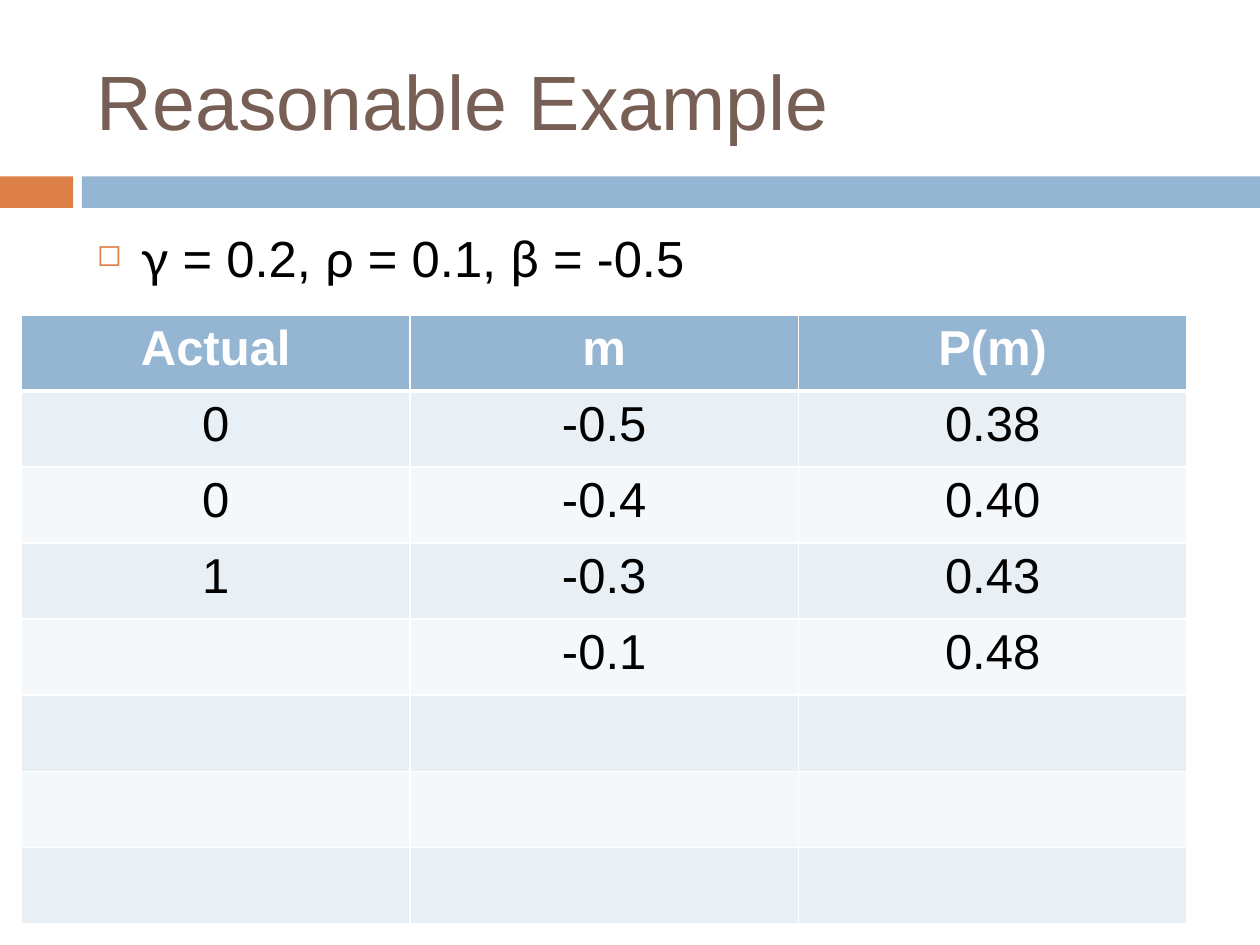
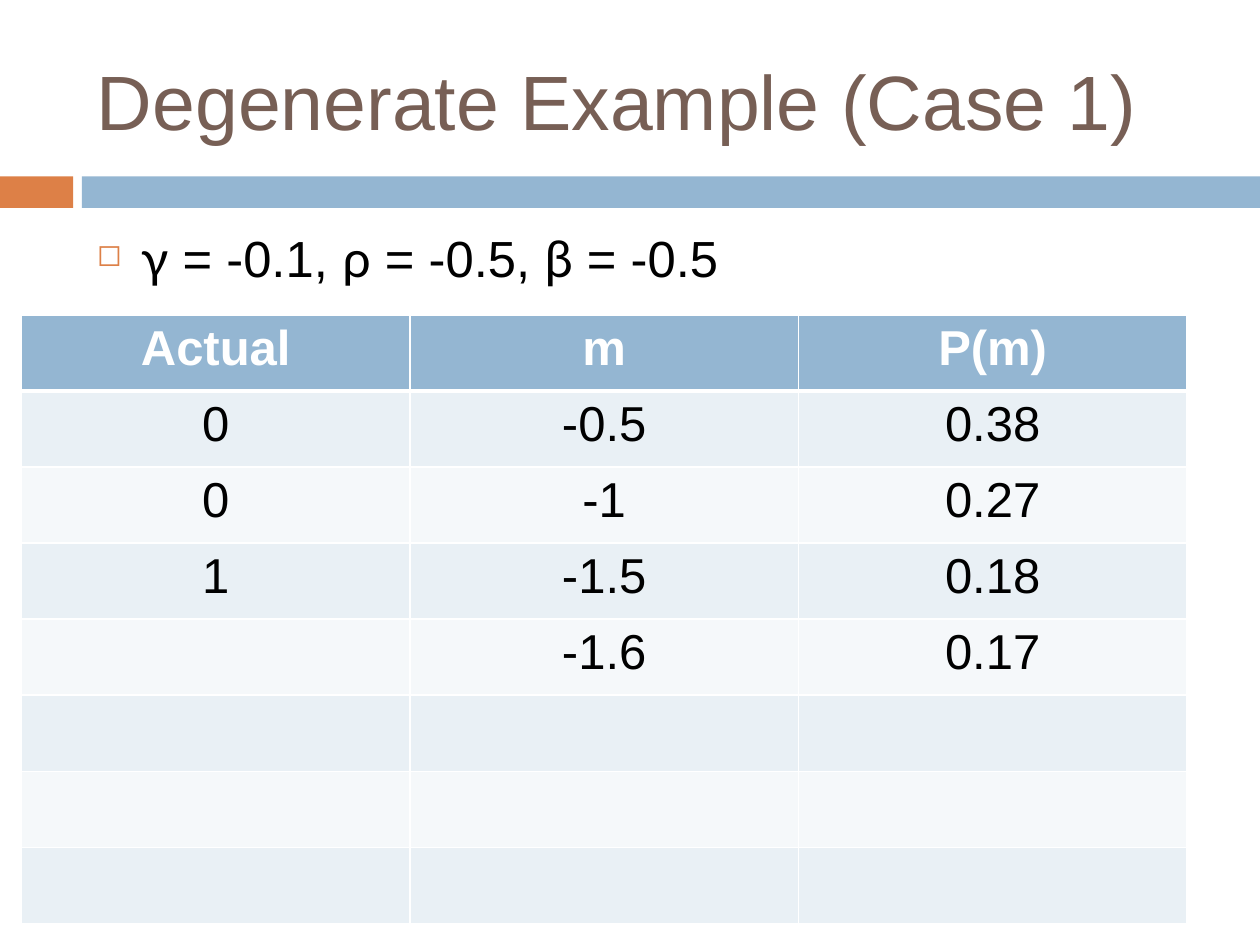
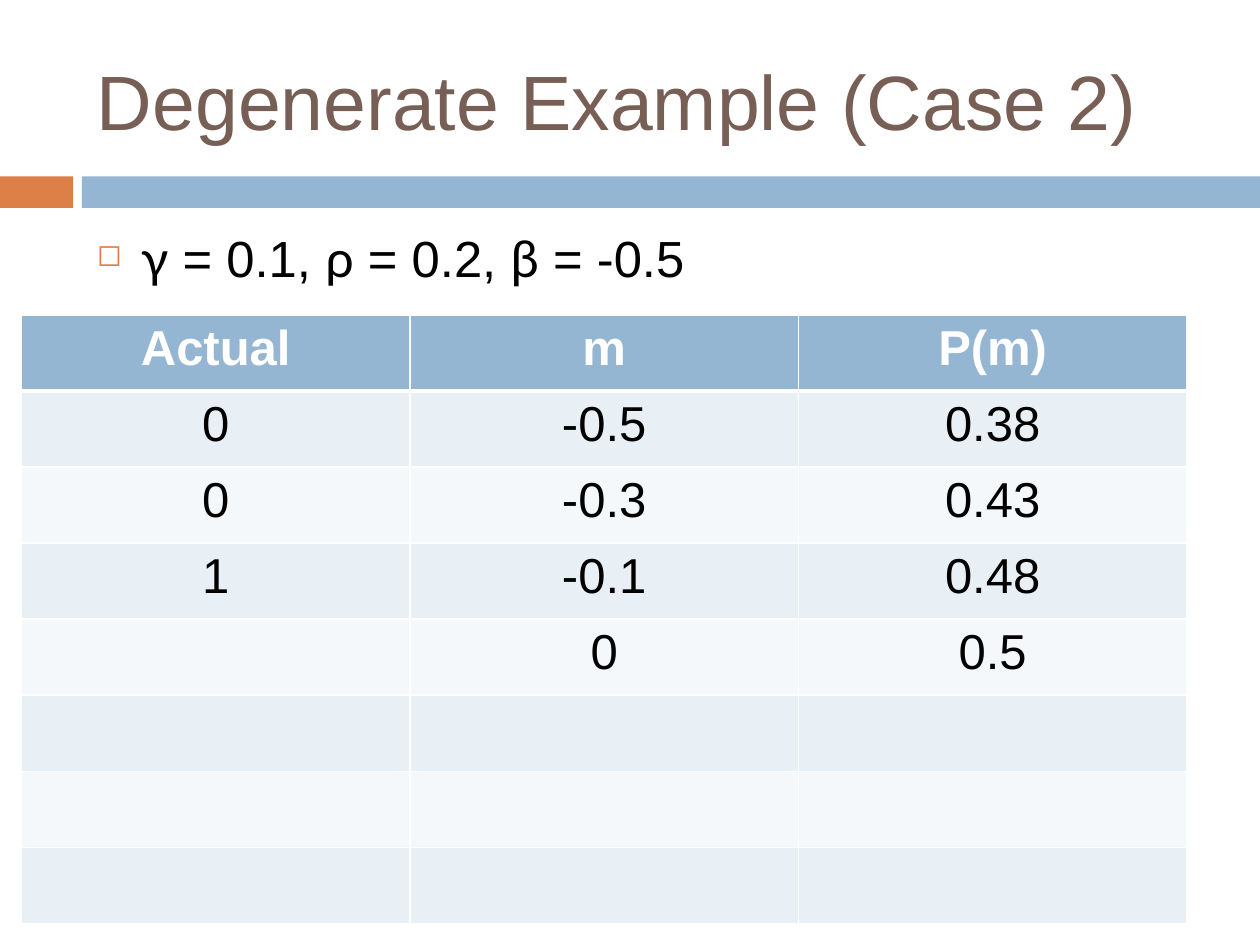
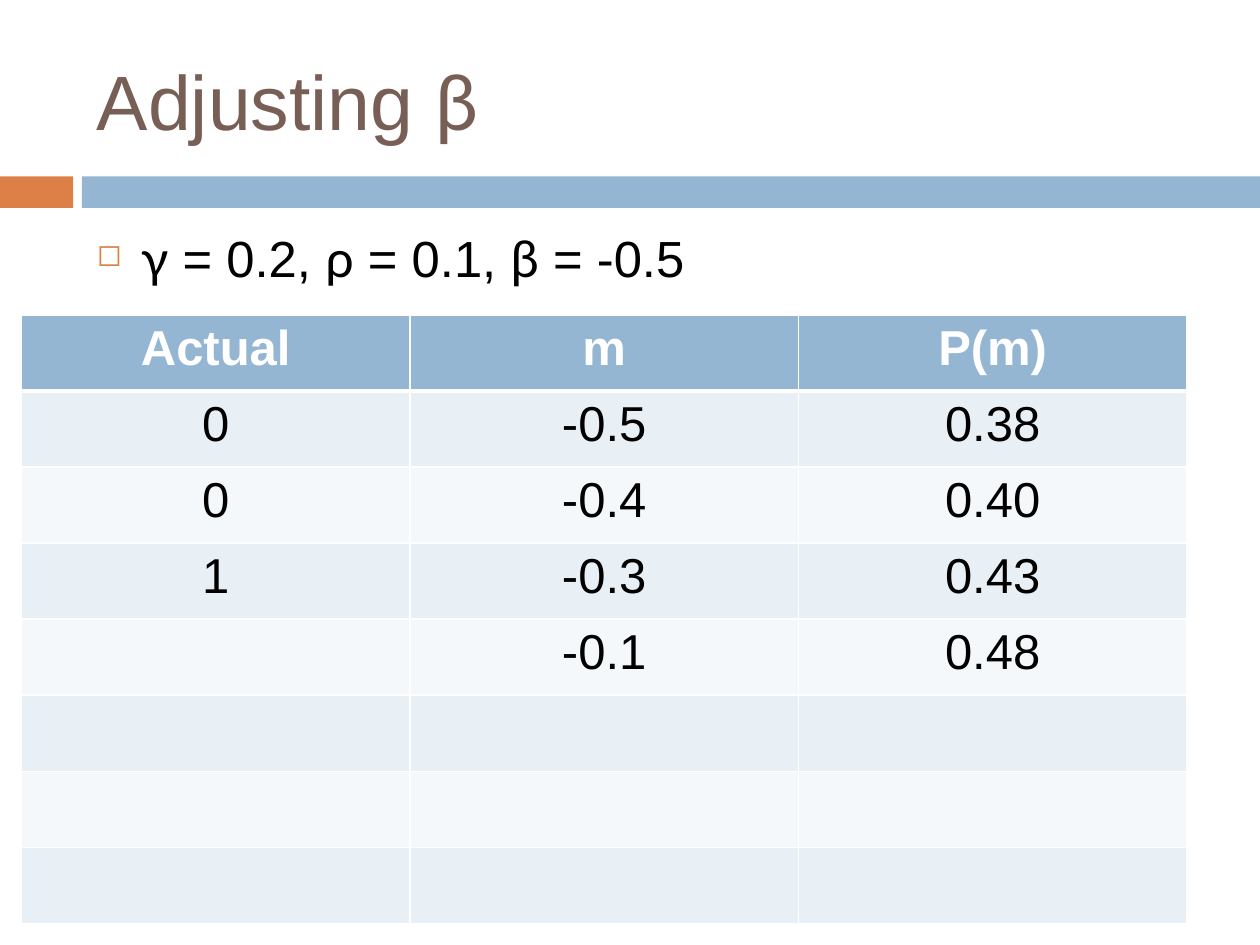
"""Build four slides that trace m and P(m) under different parameter settings."""
from itertools import groupby

from lxml.etree import SubElement
from pptx import Presentation
from pptx.dml.color import RGBColor as RGB
from pptx.enum.shapes import MSO_SHAPE as Preset
from pptx.enum.text import MSO_ANCHOR as Anchor, PP_ALIGN as Align
from pptx.oxml.ns import qn
from pptx.util import Inches, Pt

COLORS = {
    "title": "775F55",
    "accent": "DD8047",
    "band": "94B6D2",
    "odd_row": "E9F0F5",
    "even_row": "F5F8FA",
    "text": "000000",
    "white": "FFFFFF",
}
FONT, GREEK_FONT, GREEK = "Arial", "Lato", "γρβ"
HEADER = ("Actual", "m", "P(m)")
ACTUAL = ("0", "0", "1", "")
ROWS, COLUMNS = 8, len(HEADER)
TABLE_WIDTH, TABLE_HEIGHT = Inches(9.25), Inches(4.83)
TEXT_LEFT, TEXT_WIDTH = Inches(0.67), Inches(8.92)
BANDS = ((0, 0.58, "accent"), (0.65, 9.35, "band"))

REASONABLE = (("-0.5", "-0.4", "-0.3", "-0.1"), ("0.38", "0.40", "0.43", "0.48"))
FALLING = (("-0.5", "-1", "-1.5", "-1.6"), ("0.38", "0.27", "0.18", "0.17"))
RISING = (("-0.5", "-0.3", "-0.1", "0"), ("0.38", "0.43", "0.48", "0.5"))
SLIDES = (
    ("Reasonable Example", "γ = 0.2, ρ = 0.1, β = -0.5", REASONABLE),
    ("Degenerate Example (Case 1)", "γ = -0.1, ρ = -0.5, β = -0.5", FALLING),
    ("Degenerate Example (Case 2)", "γ = 0.1, ρ = 0.2, β = -0.5", RISING),
    ("Adjusting β", "γ = 0.2, ρ = 0.1, β = -0.5", REASONABLE),
)


def add_text(slide, text, top, height, size, color, anchor):
    """Add a text box whose Greek letters take their own font."""
    box = slide.shapes.add_textbox(TEXT_LEFT, Inches(top), TEXT_WIDTH, Inches(height))
    box.text_frame.word_wrap = True
    box.text_frame.vertical_anchor = anchor
    paragraph = box.text_frame.paragraphs[0]
    for is_greek, letters in groupby(text, lambda letter: letter in GREEK):
        run = paragraph.add_run()
        run.text = "".join(letters)
        run.font.name = GREEK_FONT if is_greek else FONT
        run.font.size = Pt(size)
        run.font.color.rgb = RGB.from_string(COLORS[color])
    return paragraph


def add_borders(cell, row):
    """Draw white cell borders, with a thick line under the header row."""
    thick_side = {0: "lnB", 1: "lnT"}.get(row)
    for side in ("lnL", "lnR", "lnT", "lnB"):
        width = Pt(3 if side == thick_side else 1)
        line = SubElement(cell._tc.get_or_add_tcPr(), qn(f"a:{side}"), w=str(width))
        fill = SubElement(line, qn("a:solidFill"))
        SubElement(fill, qn("a:srgbClr"), val=COLORS["white"])


presentation = Presentation()
presentation.slide_width, presentation.slide_height = Inches(10), Inches(7.5)

for title, parameters, (m_values, p_values) in SLIDES:
    slide = presentation.slides.add_slide(presentation.slide_layouts[6])

    for left, width, color in BANDS:
        band = slide.shapes.add_shape(
            Preset.RECTANGLE, Inches(left), Inches(1.4), Inches(width), Inches(0.25))
        band.shadow.inherit = False
        band.fill.solid()
        band.fill.fore_color.rgb = RGB.from_string(COLORS[color])
        band.line.fill.background()

    add_text(slide, title, 0.25, 1.08, 44, "title", Anchor.MIDDLE)

    bullet = add_text(slide, parameters, 1.75, 4.92, 29, "text", Anchor.TOP)
    properties = bullet._p.get_or_add_pPr()
    properties.set("marL", str(Inches(0.35)))
    properties.set("indent", str(-Inches(0.35)))
    bullet_color = SubElement(properties, qn("a:buClr"))
    SubElement(bullet_color, qn("a:srgbClr"), val=COLORS["accent"])
    SubElement(properties, qn("a:buSzPct"), val="60000")
    SubElement(properties, qn("a:buChar"), char="◻")

    table = slide.shapes.add_table(
        ROWS, COLUMNS, Inches(0.17), Inches(2.5), TABLE_WIDTH, TABLE_HEIGHT).table
    records = [HEADER, *zip(ACTUAL, m_values, p_values)]
    records += [("",) * COLUMNS] * (ROWS - len(records))
    for row, record in enumerate(records):
        row_color = "band" if row == 0 else "odd_row" if row % 2 else "even_row"
        for column, value in enumerate(record):
            cell = table.cell(row, column)
            add_borders(cell, row)
            cell.fill.solid()
            cell.fill.fore_color.rgb = RGB.from_string(COLORS[row_color])
            paragraph = cell.text_frame.paragraphs[0]
            paragraph.text = value
            paragraph.alignment = Align.CENTER
            for run in paragraph.runs:
                run.font.name = FONT
                run.font.size = Pt(28)
                run.font.bold = row == 0
                run.font.color.rgb = RGB.from_string(COLORS["text" if row else "white"])

presentation.save("out.pptx")
